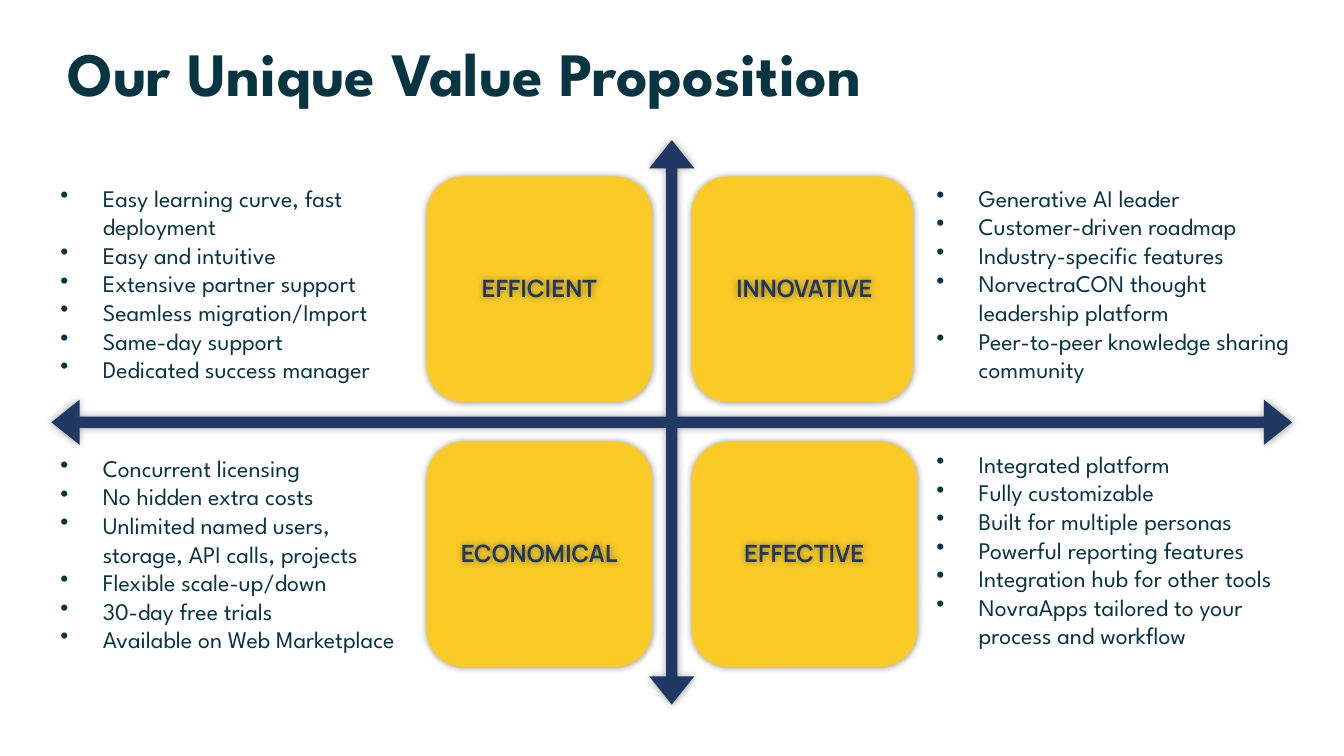
"""Build the value proposition slide: four quadrants around a crossed arrow."""
from dataclasses import dataclass
from typing import Any

from lxml.etree import SubElement
from pptx import Presentation
from pptx.dml.color import RGBColor
from pptx.enum.shapes import MSO_SHAPE as Preset
from pptx.enum.text import MSO_ANCHOR as Anchor, PP_ALIGN as Align
from pptx.oxml.ns import qn
from pptx.util import Pt

NAVY, YELLOW, TEAL = "1F3864", "FACB26", "073642"
TILE, TILE_PITCH, TILE_LEFT, TILE_TOP = 161.28, 189.36, 304.56, 126
LABEL_INSET = 7.92
LIST_LEFTS = (34.56, 660.24)
BULLET_INDENT = 30.24


@dataclass
class Box:
    left: float
    top: float
    width: float
    height: float

    def lengths(self) -> list[Pt]:
        return [Pt(side) for side in (self.left, self.top, self.width, self.height)]


@dataclass
class Quadrant:
    label: str
    column: int
    row: int
    tile_width: float
    list_top: float
    list_width: float
    list_height: float
    points: list[str]


QUADRANTS = [
    Quadrant("EFFICIENT", 0, 0, TILE, 122.4, 268.56, 134.64, [
        "Easy learning curve, fast deployment", "Easy and intuitive",
        "Extensive partner support", "Seamless migration/Import",
        "Same-day support", "Dedicated success manager"]),
    Quadrant("INNOVATIVE", 1, 0, 158.4, 122.4, 276.48, 134.64, [
        "Generative AI leader", "Customer-driven roadmap",
        "Industry-specific features", "NorvectraCON thought leadership platform",
        "Peer-to-peer knowledge sharing community"]),
    Quadrant("ECONOMICAL", 0, 1, TILE, 315.36, 270, 134.64, [
        "Concurrent licensing", "No hidden extra costs",
        "Unlimited named users, storage, API calls, projects",
        "Flexible scale-up/down", "30-day free trials",
        "Available on Web Marketplace"]),
    Quadrant("EFFECTIVE", 1, 1, TILE, 312.48, 276.48, 183.6, [
        "Integrated platform", "Fully customizable",
        "Built for multiple personas", "Powerful reporting features",
        "Integration hub for other tools",
        "NovraApps tailored to your process and workflow"]),
]

TITLE_FORMAT = {"name": "League Spartan", "size": Pt(44), "bold": True}
LABEL_FORMAT = {"name": "Manrope", "size": Pt(17), "bold": True}
LIST_FORMAT = {"name": "League Spartan", "size": Pt(17), "bold": False}


def color(value: str) -> RGBColor:
    return RGBColor.from_string(value)


def add_soft_shadow(shape: Any) -> None:
    shape.shadow.inherit = False
    effects = shape._element.spPr.find(qn("a:effectLst"))
    shadow = SubElement(effects, qn("a:outerShdw"), blurRad=str(Pt(5)), dist="0",
                        dir="0", algn="ctr", rotWithShape="0")
    tint = SubElement(shadow, qn("a:srgbClr"), val="000000")
    SubElement(tint, qn("a:alpha"), val="40000")


def add_solid(page: Any, preset: Preset, box: Box, fill: str,
              adjustments: list[float]) -> None:
    shape = page.shapes.add_shape(preset, *box.lengths())
    shape.fill.solid()
    shape.fill.fore_color.rgb = color(fill)
    shape.line.fill.background()
    for index, value in enumerate(adjustments):
        shape.adjustments[index] = value
    add_soft_shadow(shape)


def add_bullet(para: Any) -> None:
    properties = para._p.get_or_add_pPr()
    properties.set("marL", str(Pt(BULLET_INDENT)))
    properties.set("indent", str(-Pt(BULLET_INDENT)))
    tint = SubElement(properties, qn("a:buClr"))
    SubElement(tint, qn("a:srgbClr"), val=TEAL)
    SubElement(properties, qn("a:buChar"), char="•")


def add_text(page: Any, box: Box, lines: list[str], font_format: dict[str, Any],
             ink: str, para_format: dict[str, Any], anchor: Anchor,
             insets: tuple[float, float], bulleted: bool = False) -> Any:
    shape = page.shapes.add_textbox(*box.lengths())
    frame = shape.text_frame
    across, down = (Pt(inset) for inset in insets)
    frame_format = {"word_wrap": True, "vertical_anchor": anchor,
                    "margin_left": across, "margin_right": across,
                    "margin_top": down, "margin_bottom": down}
    for name, value in frame_format.items():
        setattr(frame, name, value)
    for index, line in enumerate(lines):
        para = frame.add_paragraph() if index else frame.paragraphs[0]
        if bulleted:
            add_bullet(para)
        for name, value in para_format.items():
            setattr(para, name, value)
        span = para.add_run()
        span.text = line
        for name, value in font_format.items():
            setattr(span.font, name, value)
        span.font.color.rgb = color(ink)
    return shape


def add_quadrant(page: Any, quadrant: Quadrant) -> None:
    left = TILE_LEFT + quadrant.column * TILE_PITCH
    top = TILE_TOP + quadrant.row * TILE_PITCH
    add_solid(page, Preset.ROUNDED_RECTANGLE,
              Box(left, top, quadrant.tile_width, TILE), YELLOW, [0.167])
    label_side = TILE - 2 * LABEL_INSET
    label = add_text(page, Box(left + LABEL_INSET, top + LABEL_INSET, label_side, label_side),
                     [quadrant.label], LABEL_FORMAT, NAVY,
                     {"alignment": Align.CENTER, "line_spacing": 0.9}, Anchor.MIDDLE, (6, 6))
    add_soft_shadow(label)
    add_text(page, Box(LIST_LEFTS[quadrant.column], quadrant.list_top,
                       quadrant.list_width, quadrant.list_height),
             quadrant.points, LIST_FORMAT, TEAL, {}, Anchor.TOP, (8.64, 8.64), True)


def main() -> None:
    deck = Presentation()
    deck.slide_width, deck.slide_height = Pt(960), Pt(540)
    page = deck.slides.add_slide(deck.slide_layouts[6])
    add_solid(page, Preset.QUAD_ARROW, Box(36.72, 100.08, 886.32, 403.2), NAVY,
              [0.02, 0.04, 0.05])
    for quadrant in QUADRANTS:
        add_quadrant(page, quadrant)
    add_text(page, Box(43.2, 24.48, 828, 60.48), ["Our Unique Value Proposition"],
             TITLE_FORMAT, TEAL, {"line_spacing": 0.9}, Anchor.MIDDLE, (5.04, 2.88))
    deck.save("out.pptx")


if __name__ == "__main__":
    main()
